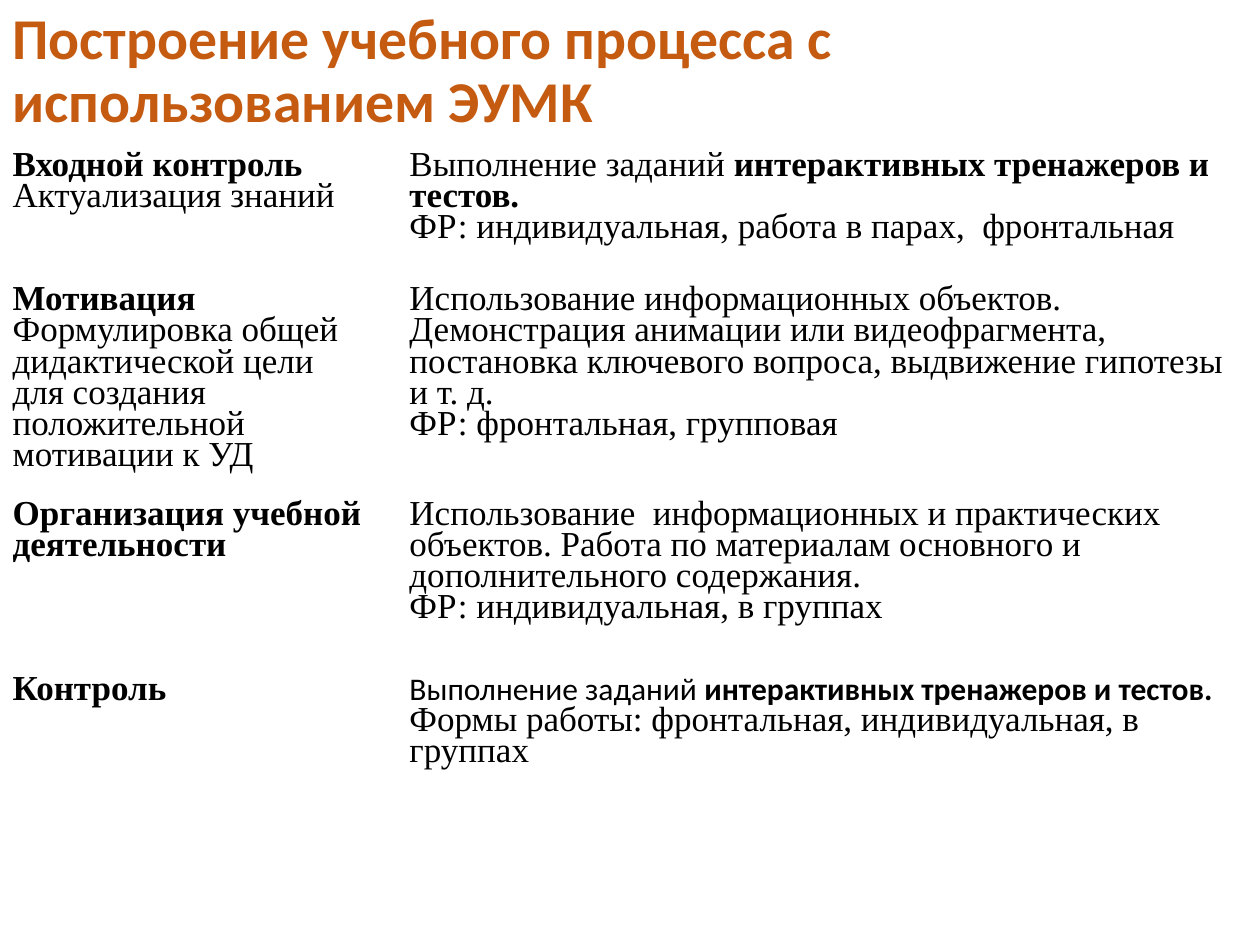
"""Build a slide that sets out the stages of a lesson in a two-column table."""
from lxml import etree
from pptx import Presentation
from pptx.dml.color import RGBColor
from pptx.enum.text import MSO_ANCHOR
from pptx.oxml.ns import qn
from pptx.util import Cm, Pt

MIDDLE = MSO_ANCHOR.MIDDLE

TITLE = "Построение учебного процесса с использованием ЭУМК"

STAGES = [
    (
        [[("Входной контроль ", "strong"), ("Актуализация знаний", "body")]],
        [
            [("Выполнение заданий ", "body"), ("интерактивных тренажеров и тестов.", "strong")],
            [("ФР: индивидуальная, работа в парах,  фронтальная", "body")],
        ],
    ),
    (
        [
            [("Мотивация ", "strong"), ("Формулировка общей дидактической цели", "body")],
            [("для создания положительной мотивации к УД", "body")],
        ],
        [
            [("Использование информационных объектов.", "body")],
            [("Демонстрация анимации или видеофрагмента,  постановка ключевого вопроса, "
              "выдвижение гипотезы и т. д.", "body")],
            [("ФР: фронтальная, групповая", "body")],
        ],
    ),
    (
        [[("Организация учебной деятельности", "strong")]],
        [
            [("Использование  информационных и практических объектов. "
              "Работа по материалам основного и дополнительного содержания.", "body")],
            [("ФР: индивидуальная, в группах", "body")],
        ],
    ),
    (
        [[("Контроль", "strong")]],
        [
            [("Выполнение заданий ", "small"),
             ("интерактивных тренажеров и тестов.", "small_strong")],
            [("Формы работы: фронтальная, индивидуальная, в группах", "body")],
        ],
    ),
]

SERIF, SANS = "Times New Roman", "Calibri"
BLACK = RGBColor(0, 0, 0)
THEME = {
    "background": RGBColor(255, 255, 255),
    "title_spacing": 0.9,
    "table_spacing": 0.8,
    "border": 1,
    "header_border": 3,
    "fonts": {
        "title": {"name": SANS, "size": Pt(33), "bold": True, "color": RGBColor(0xC5, 0x5A, 0x11)},
        "body": {"name": SERIF, "size": Pt(20), "bold": False, "color": BLACK},
        "strong": {"name": SERIF, "size": Pt(20), "bold": True, "color": BLACK},
        "small": {"name": SANS, "size": Pt(18), "bold": False, "color": BLACK},
        "small_strong": {"name": SANS, "size": Pt(18), "bold": True, "color": BLACK},
    },
}

SLIDE_WIDTH, SLIDE_HEIGHT = Cm(25.4), Cm(19.05)
TITLE_HEIGHT = Cm(2.92)
COLUMN_WIDTHS = [Cm(8), Cm(17.4)]
ROW_HEIGHTS = [Cm(2.72), Cm(3.89), Cm(3.53), Cm(3.4)]


def paint(target):
    target.fill.solid()
    target.fill.fore_color.rgb = THEME["background"]


def write(text_frame, paragraphs, spacing):
    for index, runs in enumerate(paragraphs):
        paragraph = text_frame.add_paragraph() if index else text_frame.paragraphs[0]
        paragraph.line_spacing = spacing
        for text, style in runs:
            run = paragraph.add_run()
            run.text = text
            for attribute, value in THEME["fonts"][style].items():
                if attribute == "color":
                    run.font.color.rgb = value
                else:
                    setattr(run.font, attribute, value)


def add_borders(cell, bottom_width):
    properties = cell._tc.get_or_add_tcPr()
    widths = dict.fromkeys(("lnL", "lnR", "lnT"), THEME["border"])
    widths["lnB"] = bottom_width
    for side, width in widths.items():
        line = etree.SubElement(properties, qn(f"a:{side}"), w=str(Pt(width)))
        fill = etree.SubElement(line, qn("a:solidFill"))
        etree.SubElement(fill, qn("a:srgbClr"), val=str(THEME["background"]))


def add_title(slide):
    shape = slide.shapes.add_textbox(0, 0, SLIDE_WIDTH, TITLE_HEIGHT)
    paint(shape)
    shape.text_frame.word_wrap = True
    shape.text_frame.vertical_anchor = MIDDLE
    write(shape.text_frame, [[(TITLE, "title")]], THEME["title_spacing"])


def add_stages(slide):
    table = slide.shapes.add_table(
        len(STAGES), len(COLUMN_WIDTHS), 0, TITLE_HEIGHT, SLIDE_WIDTH, sum(ROW_HEIGHTS)
    ).table
    table.first_row = table.horz_banding = False
    for column, width in zip(table.columns, COLUMN_WIDTHS):
        column.width = width
    for index, (row, height, contents) in enumerate(zip(table.rows, ROW_HEIGHTS, STAGES)):
        row.height = height
        for cell, paragraphs in zip(row.cells, contents):
            add_borders(cell, THEME["border"] if index else THEME["header_border"])
            paint(cell)
            write(cell.text_frame, paragraphs, THEME["table_spacing"])


def main():
    presentation = Presentation()
    presentation.slide_width, presentation.slide_height = SLIDE_WIDTH, SLIDE_HEIGHT
    slide = presentation.slides.add_slide(presentation.slide_layouts[6])
    paint(slide.background)
    add_title(slide)
    add_stages(slide)
    presentation.save("out.pptx")


if __name__ == "__main__":
    main()
